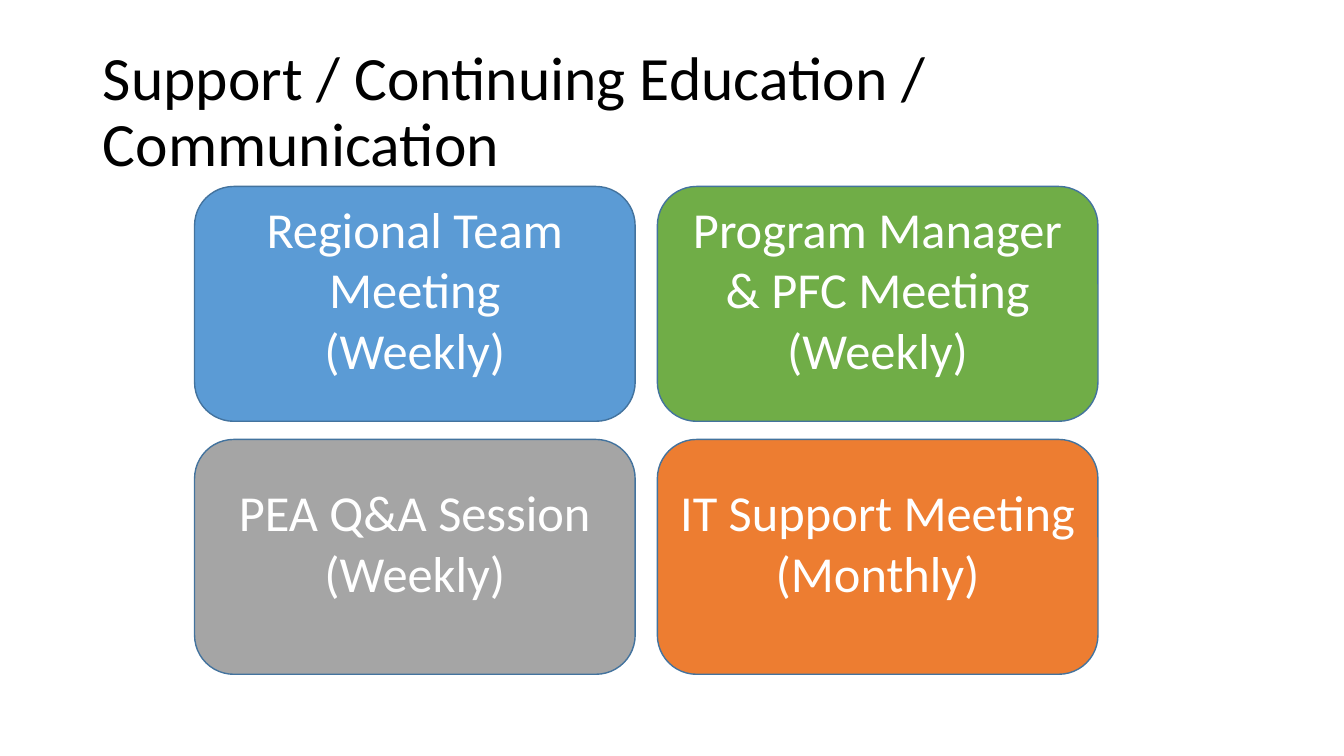
from pptx import Presentation
from pptx.dml.color import RGBColor
from pptx.enum.shapes import MSO_SHAPE as Shape
from pptx.enum.text import MSO_ANCHOR as Anchor, MSO_AUTO_SIZE as AutoSize, PP_ALIGN as Align
from pptx.util import Inches, Pt

BLACK = RGBColor(0x00, 0x00, 0x00)
WHITE = RGBColor(0xFF, 0xFF, 0xFF)
BLUE = RGBColor(0x5B, 0x9B, 0xD5)
GREEN = RGBColor(0x70, 0xAD, 0x47)
GRAY = RGBColor(0xA5, 0xA5, 0xA5)
ORANGE = RGBColor(0xED, 0x7D, 0x31)
OUTLINE = RGBColor(0x43, 0x73, 0x9E)

# Meeting grid, in inches
GRID_LEFT, GRID_TOP = 1.93, 1.85
CARD_WIDTH, CARD_HEIGHT = 4.37, 2.33
COLUMN_STEP, ROW_STEP = 4.59, 2.51

MEETINGS = [
    ("Regional Team Meeting", "(Weekly)", BLUE),
    ("Program Manager & PFC Meeting", "(Weekly)", GREEN),
    ("PEA Q&A Session", "(Weekly)", GRAY),
    ("IT Support Meeting", "(Monthly)", ORANGE),
]


def apply(target, values):
    for name, value in values.items():
        setattr(target, name, value)


class SlideBuilder:
    font_name = "Calibri"

    def __init__(self, slide):
        self.slide = slide

    def fill_text(self, frame, lines, size, color, paragraph_format, frame_format):
        apply(frame, {"word_wrap": True, "auto_size": AutoSize.NONE,
                      "vertical_anchor": Anchor.MIDDLE, **frame_format})
        frame.text = "\n".join(lines)
        for paragraph in frame.paragraphs:
            apply(paragraph, paragraph_format)
            apply(paragraph.font, {"name": self.font_name, "size": Pt(size)})
            paragraph.font.color.rgb = color

    def title(self, text, left, top, width, height):
        heading = self.slide.shapes.title
        apply(heading, {"left": Inches(left), "top": Inches(top),
                        "width": Inches(width), "height": Inches(height)})
        self.fill_text(heading.text_frame, [text], 44, BLACK,
                       {"alignment": Align.LEFT, "line_spacing": 0.9}, {})

    def card(self, lines, fill, left, top):
        card = self.slide.shapes.add_shape(
            Shape.ROUNDED_RECTANGLE, Inches(left), Inches(top),
            Inches(CARD_WIDTH), Inches(CARD_HEIGHT))
        card.shadow.inherit = False
        card.fill.solid()
        card.fill.fore_color.rgb = fill
        card.line.color.rgb = OUTLINE
        card.line.width = Pt(1)
        # The deeper bottom inset lifts the text above the middle
        self.fill_text(card.text_frame, lines, 36, WHITE,
                       {"alignment": Align.CENTER}, {"margin_bottom": Inches(0.35)})


def main():
    deck = Presentation()
    apply(deck, {"slide_width": Inches(13.33), "slide_height": Inches(7.5)})
    builder = SlideBuilder(deck.slides.add_slide(deck.slide_layouts.get_by_name("Title Only")))

    # Title
    builder.title("Support / Continuing Education / Communication", 0.92, 0.4, 11.5, 1.45)

    # Meetings, two per row
    for index, (meeting, frequency, fill) in enumerate(MEETINGS):
        row, column = divmod(index, 2)
        builder.card([meeting, frequency], fill,
                     GRID_LEFT + column * COLUMN_STEP, GRID_TOP + row * ROW_STEP)

    deck.save("out.pptx")


if __name__ == "__main__":
    main()
